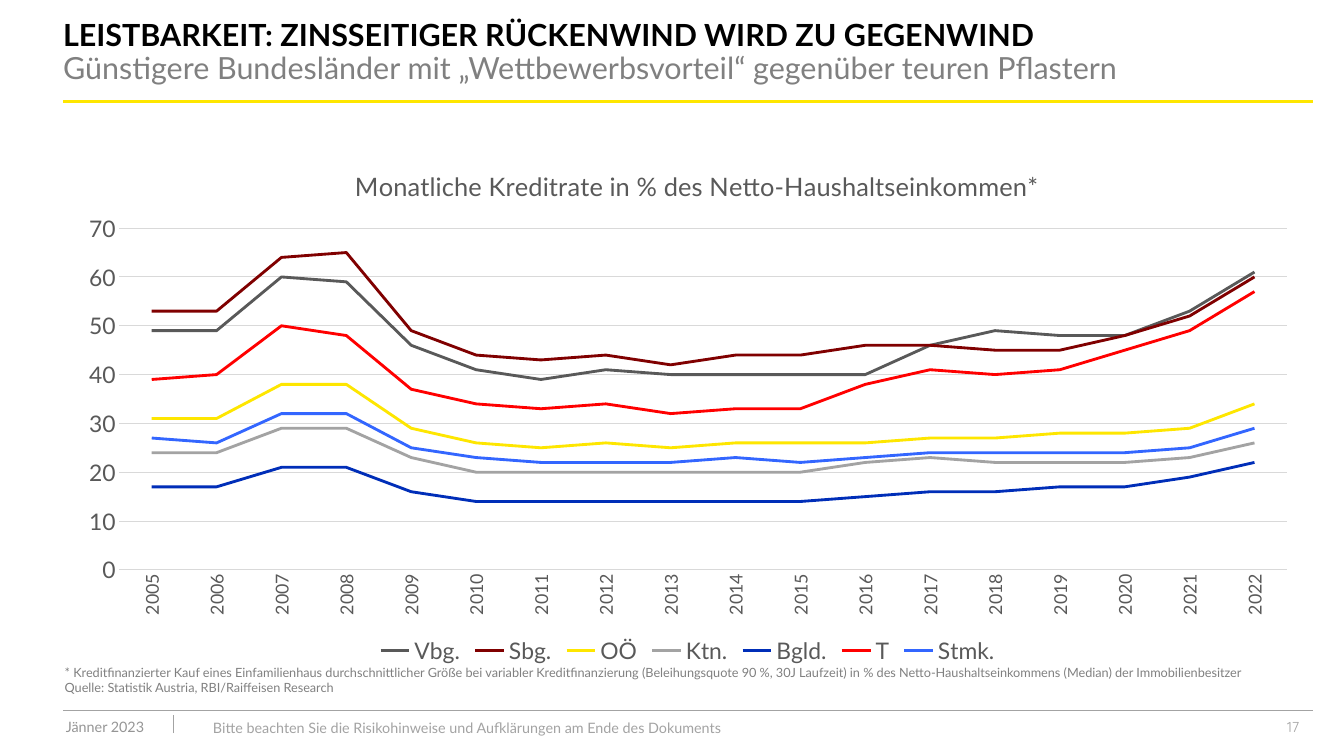
from lxml.etree import SubElement
from pptx import Presentation
from pptx.chart.data import CategoryChartData
from pptx.dml.color import RGBColor
from pptx.enum.chart import XL_CHART_TYPE as ChartType, XL_LEGEND_POSITION as LegendPosition
from pptx.enum.chart import XL_TICK_MARK as TickMark
from pptx.enum.text import MSO_ANCHOR as Anchor, MSO_AUTO_SIZE as AutoSize, PP_ALIGN as Align
from pptx.oxml import parse_xml
from pptx.oxml.ns import nsdecls, qn
from pptx.util import Inches, Pt

BLACK = RGBColor(0x00, 0x00, 0x00)
WHITE = RGBColor(0xFF, 0xFF, 0xFF)
DARK_GREY = RGBColor(0x59, 0x59, 0x59)
MID_GREY = RGBColor(0x80, 0x80, 0x80)
DATE_GREY = RGBColor(0x95, 0x95, 0x95)
LIGHT_GREY = RGBColor(0xA3, 0xA3, 0xA3)
GRID_GREY = RGBColor(0xD9, 0xD9, 0xD9)
YELLOW = RGBColor(0xFE, 0xE6, 0x00)
DARK_RED = RGBColor(0x80, 0x00, 0x00)
RED = RGBColor(0xFF, 0x00, 0x00)
DARK_BLUE = RGBColor(0x00, 0x2E, 0xB8)
BLUE = RGBColor(0x33, 0x66, 0xFF)

YEARS = [str(year) for year in range(2005, 2023)]
LOAN_RATES = [
    ("Vbg.", DARK_GREY, (49, 49, 60, 59, 46, 41, 39, 41, 40, 40, 40, 40, 46, 49, 48, 48, 53, 61)),
    ("Sbg.", DARK_RED, (53, 53, 64, 65, 49, 44, 43, 44, 42, 44, 44, 46, 46, 45, 45, 48, 52, 60)),
    ("OÖ", YELLOW, (31, 31, 38, 38, 29, 26, 25, 26, 25, 26, 26, 26, 27, 27, 28, 28, 29, 34)),
    ("Ktn.", LIGHT_GREY, (24, 24, 29, 29, 23, 20, 20, 20, 20, 20, 20, 22, 23, 22, 22, 22, 23, 26)),
    ("Bgld.", DARK_BLUE, (17, 17, 21, 21, 16, 14, 14, 14, 14, 14, 14, 15, 16, 16, 17, 17, 19, 22)),
    ("T", RED, (39, 40, 50, 48, 37, 34, 33, 34, 32, 33, 33, 38, 41, 40, 41, 45, 49, 57)),
    ("Stmk.", BLUE, (27, 26, 32, 32, 25, 23, 22, 22, 22, 23, 22, 23, 24, 24, 24, 24, 25, 29)),
]


def style_font(font, size, color, name="Lato", bold=False):
    """Set face, size, colour and weight of a font."""
    font.name, font.size, font.bold = name, Pt(size), bold
    font.color.rgb = color


def add_rule(slide, start, end, color, width):
    """Draw a straight rule between two points given in inches."""
    rule = slide.shapes.add_connector(1, *map(Inches, start + end))
    rule.line.color.rgb = color
    rule.line.width = Pt(width)
    SubElement(rule._element.spPr, qn("a:effectLst"))


def add_text(slide, box, lines, size, color, name="Lato", insets=(0, 0, 0, 0),
             align=Align.LEFT, wrap=True):
    """Place lines of text in a box given in inches."""
    frame = slide.shapes.add_textbox(*map(Inches, box)).text_frame
    frame.word_wrap = wrap
    (frame.margin_left, frame.margin_top,
     frame.margin_right, frame.margin_bottom) = map(Inches, insets)
    frame.text = "\n".join(lines)
    for paragraph in frame.paragraphs:
        paragraph.alignment = align
        for run in paragraph.runs:
            style_font(run.font, size, color, name)


def add_header(slide, left, top, width, right):
    """Fill the title placeholder and underline it."""
    title = slide.shapes.title
    title.left, title.top = Inches(left), Inches(top)
    title.width, title.height = Inches(width), Inches(0.42)
    frame = title.text_frame
    frame.margin_left = frame.margin_top = frame.margin_right = frame.margin_bottom = 0
    frame.vertical_anchor = Anchor.BOTTOM
    frame.word_wrap = True
    frame.auto_size = AutoSize.NONE
    heading = frame.paragraphs[0]
    heading.text = ("LEISTBARKEIT: ZINSSEITIGER RÜCKENWIND WIRD ZU GEGENWIND\v"
                    "Günstigere Bundesländer mit „Wettbewerbsvorteil“ gegenüber teuren Pflastern")
    heading.alignment = Align.LEFT
    heading.line_spacing = 0.9
    headline, subline = heading.runs
    style_font(headline.font, 24, BLACK, bold=True)
    style_font(subline.font, 24, MID_GREY)
    add_rule(slide, (left, top + 0.59), (right, top + 0.59), YELLOW, 3)


def set_layout(parent, index, target="", **fractions):
    """Fix the place of a chart part as fractions of the chart."""
    for old in parent.findall(qn("c:layout")):
        parent.remove(old)
    modes = "".join(f'<c:{key}Mode val="edge"/>' for key in "xy")
    places = "".join(f'<c:{key} val="{value}"/>' for key, value in fractions.items())
    parent.insert(index, parse_xml(
        f'<c:layout {nsdecls("c")}><c:manualLayout>{target}{modes}{places}'
        '</c:manualLayout></c:layout>'))


def add_rate_chart(slide, left, top, width, height):
    """Draw the line chart of loan rates by federal state."""
    data = CategoryChartData(number_format="0")
    data.categories = YEARS
    for state, _, rates in LOAN_RATES:
        data.add_series(state, rates)
    chart = slide.shapes.add_chart(
        ChartType.LINE, *map(Inches, (left, top, width, height)), data).chart
    style_font(chart.font, 14, DARK_GREY)

    chart.has_title = True
    heading = chart.chart_title.text_frame
    heading.text = "Monatliche Kreditrate in % des Netto-Haushaltseinkommen*"
    style_font(heading.paragraphs[0].runs[0].font, 20, DARK_GREY)
    chart.chart_title.include_in_layout = False
    set_layout(chart.chart_title._element, 1, x=0.23, y=0.04)

    chart.has_legend = True
    chart.legend.position = LegendPosition.BOTTOM
    chart.legend.include_in_layout = False
    style_font(chart.legend.font, 18, DARK_GREY)

    years, percent = chart.category_axis, chart.value_axis
    for axis, size in ((years, 14), (percent, 18)):
        axis.major_tick_mark = axis.minor_tick_mark = TickMark.NONE
        style_font(axis.tick_labels.font, size, DARK_GREY)
    years.format.line.color.rgb = GRID_GREY
    years.format.line.width = Pt(0.75)
    years._element.find(qn("c:txPr")).find(qn("a:bodyPr")).set("rot", "-5400000")
    percent.minimum_scale, percent.maximum_scale, percent.major_unit = 0, 70, 10
    percent.tick_labels.number_format = "0"
    percent.tick_labels.number_format_is_linked = False
    percent.format.line.fill.background()
    percent.major_gridlines.format.line.color.rgb = GRID_GREY
    percent.major_gridlines.format.line.width = Pt(0.75)

    plot = chart.plots[0]
    plot.vary_by_categories = False
    for series, (_, color, _) in zip(plot.series, LOAN_RATES):
        series.smooth = False
        series.format.line.color.rgb = color
        series.format.line.width = Pt(2.25)
    set_layout(plot._element.getparent(), 0, '<c:layoutTarget val="inner"/>',
               x=0.045, y=0.164, w=0.935, h=0.648)


def add_footnote(slide, left, top, width, height):
    """Write the footnote and the source line."""
    add_text(slide, (left, top, width, height), [
        "* Kreditfinanzierter Kauf eines Einfamilienhaus durchschnittlicher Größe bei variabler "
        "Kreditfinanzierung (Beleihungsquote 90 %, 30J Laufzeit) in % des "
        "Netto-Haushaltseinkommens (Median) der Immobilienbesitzer",
        "Quelle: Statistik Austria, RBI/Raiffeisen Research",
    ], 10, MID_GREY, insets=(0.1, 0.05, 0.1, 0.05), wrap=False)


def add_footer(slide, left, top, right):
    """Draw the footer with date, notice and page number."""
    add_rule(slide, (left, top), (right, top), LIGHT_GREY, 0.75)
    divider = left + 1.21
    add_rule(slide, (divider, top + 0.25), (divider, top + 0.05), LIGHT_GREY, 0.5)
    insets = (0.15, 0.2, 0.15, 0)
    add_text(slide, (left + 0.03, top + 0.09, 1.15, 0.26), ["Jänner 2023"], 11.3, DATE_GREY)
    add_text(slide, (divider + 0.28, top - 0.1, 6.83, 0.51),
             ["Bitte beachten Sie die Risikohinweise und Aufklärungen am Ende des Dokuments"],
             11.3, LIGHT_GREY, insets=insets)
    add_text(slide, (right - 0.68, top - 0.11, 0.68, 0.39), ["17"], 11.3, LIGHT_GREY,
             name="Quicksand", insets=insets, align=Align.RIGHT)


def main():
    """Build and save the slide."""
    deck = Presentation()
    deck.slide_width, deck.slide_height = Inches(14.7), Inches(8.27)
    slide = deck.slides.add_slide(deck.slide_layouts[5])
    slide.background.fill.solid()
    slide.background.fill.fore_color.rgb = WHITE
    add_header(slide, 0.69, 0.52, 11.98, 14.36)
    add_rate_chart(slide, 0.69, 1.55, 13.66, 5.77)
    add_footnote(slide, 0.61, 7.22, 13.47, 0.44)
    add_footer(slide, 0.69, 7.77, 14.36)
    deck.save("out.pptx")


if __name__ == "__main__":
    main()
